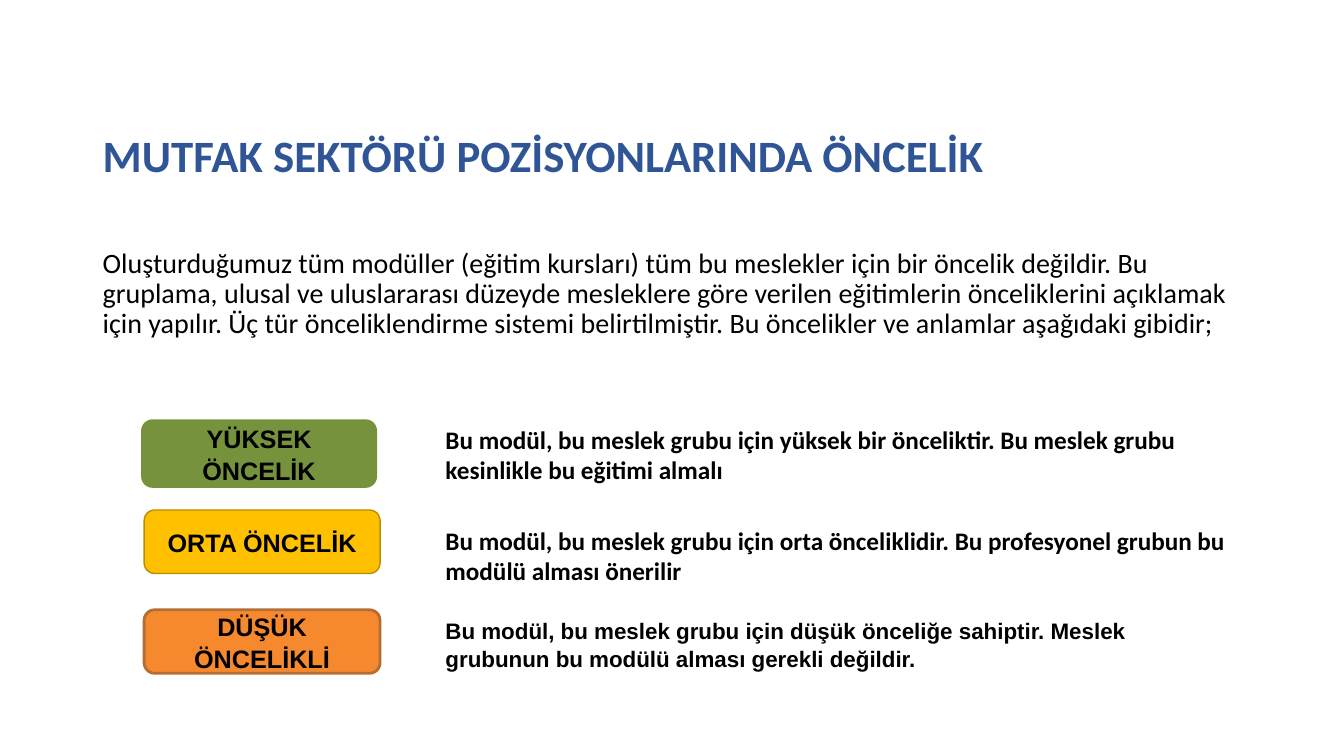
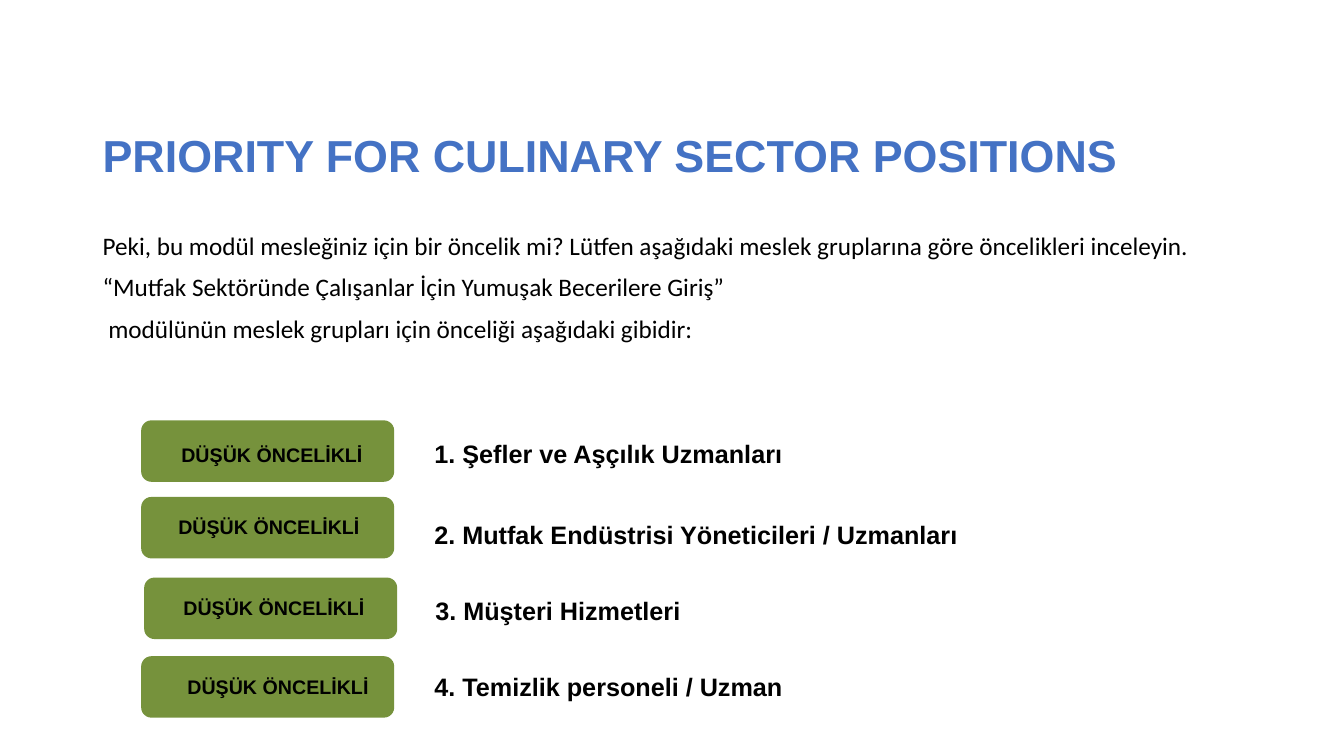
"""Build two slides on training priorities for culinary sector positions."""
from dataclasses import dataclass

import pptx
import pptx.dml.color
import pptx.enum.shapes
import pptx.enum.text
import pptx.util

Inches = pptx.util.Inches
Pt = pptx.util.Pt
Align = pptx.enum.text.PP_ALIGN
Anchor = pptx.enum.text.MSO_ANCHOR

COLORS = {
    "text": "000000",
    "title_dark": "2F5597",
    "title_light": "4472C4",
    "high": "76923C",
    "medium": "FFC000",
    "medium_edge": "BA8C00",
    "low": "F6882E",
    "low_edge": "B46D33",
}
MARGIN = 0.92
CONTENT_WIDTH = 11.5


@dataclass(frozen=True)
class Box:
    left: float
    top: float
    width: float
    height: float


@dataclass(frozen=True)
class Badge:
    box: Box
    fill: str
    edge: str = ""
    edge_width: float = 0
    label: str = ""


@dataclass(frozen=True)
class Meaning:
    box: Box
    text: str
    font: str = "Calibri"
    size: int = 18
    spacing: float = 1.0


@dataclass(frozen=True)
class Occupation:
    badge: Box
    label: Box
    name: Box
    text: str


PRIORITIES = [
    Badge(Box(1.4, 4.16, 2.34, 0.68), "high", label="YÜKSEK ÖNCELİK"),
    Badge(Box(1.43, 5.06, 2.34, 0.63), "medium", "medium_edge", 1, "ORTA ÖNCELİK"),
    Badge(Box(1.43, 6.05, 2.34, 0.63), "low", "low_edge", 2, "DÜŞÜK ÖNCELİKLİ"),
]
MEANINGS = [
    Meaning(Box(4.32, 4.16, 7.61, 0.71),
            "Bu modül, bu meslek grubu için yüksek bir önceliktir. "
            "Bu meslek grubu kesinlikle bu eğitimi almalı"),
    Meaning(Box(4.32, 5.16, 8.33, 0.71),
            "Bu modül, bu meslek grubu için orta önceliklidir. "
            "Bu profesyonel grubun bu modülü alması önerilir"),
    Meaning(Box(4.32, 6.05, 7.94, 0.68),
            "Bu modül, bu meslek grubu için düşük önceliğe sahiptir. "
            "Meslek grubunun bu modülü alması gerekli değildir.",
            "Arial", 16, 1.07),
]
OCCUPATIONS = [
    Occupation(Box(1.4, 4.17, 2.51, 0.61), Box(1.7, 4.34, 2.01, 0.34),
               Box(4.21, 4.3, 3.69, 0.4), "1. Şefler ve Aşçılık Uzmanları"),
    Occupation(Box(1.4, 4.93, 2.51, 0.61), Box(1.67, 5.06, 2.01, 0.34),
               Box(4.21, 5.1, 5.45, 0.4), "2. Mutfak Endüstrisi Yöneticileri / Uzmanları"),
    Occupation(Box(1.43, 5.73, 2.51, 0.61), Box(1.72, 5.86, 2.01, 0.34),
               Box(4.22, 5.86, 2.66, 0.4), "3. Müşteri Hizmetleri"),
    Occupation(Box(1.4, 6.51, 2.51, 0.61), Box(1.76, 6.65, 2.01, 0.34),
               Box(4.21, 6.61, 3.71, 0.4), "4. Temizlik personeli / Uzman"),
]


def rgb(name: str) -> pptx.dml.color.RGBColor:
    return pptx.dml.color.RGBColor.from_string(COLORS[name])


def inches(box: Box) -> tuple:
    return tuple(Inches(v) for v in (box.left, box.top, box.width, box.height))


def write(frame, *paragraphs: str, font: str = "Arial", size: float = 18,
          color: str = "text", bold: bool = True, align=Align.LEFT,
          anchor=Anchor.TOP, spacing: float = 1.0, gap: float = 0,
          wrap: bool = True) -> None:
    frame.word_wrap = wrap
    frame.vertical_anchor = anchor
    for index, text in enumerate(paragraphs):
        paragraph = frame.paragraphs[0] if index == 0 else frame.add_paragraph()
        paragraph.alignment = align
        paragraph.line_spacing = spacing
        if index:
            paragraph.space_before = Pt(gap)
        run = paragraph.add_run()
        run.text = text
        run.font.name = font
        run.font.size = Pt(size)
        run.font.bold = bold
        run.font.color.rgb = rgb(color)


def add_text(slide, box: Box, *paragraphs: str, **style) -> None:
    write(slide.shapes.add_textbox(*inches(box)).text_frame, *paragraphs, **style)


def add_title(slide, text: str, font: str, color: str) -> None:
    add_text(slide, Box(MARGIN, 0.79, CONTENT_WIDTH, 1.56), text, font=font,
             size=32, color=color, anchor=Anchor.MIDDLE, spacing=0.9)


def add_badge(slide, badge: Badge) -> None:
    plate = slide.shapes.add_shape(
        pptx.enum.shapes.MSO_SHAPE.ROUNDED_RECTANGLE, *inches(badge.box))
    plate.shadow.inherit = False
    plate.fill.solid()
    plate.fill.fore_color.rgb = rgb(badge.fill)
    if badge.edge:
        plate.line.color.rgb = rgb(badge.edge)
        plate.line.width = Pt(badge.edge_width)
    else:
        plate.line.fill.background()
    if badge.label:
        write(plate.text_frame, badge.label, align=Align.CENTER,
              anchor=Anchor.MIDDLE, spacing=1.07)


def build_priority_slide(slide) -> None:
    add_title(slide, "MUTFAK SEKTÖRÜ POZİSYONLARINDA ÖNCELİK", "Calibri", "title_dark")
    add_text(slide, Box(MARGIN, 2.42, CONTENT_WIDTH, 1.3),
             "Oluşturduğumuz tüm modüller (eğitim kursları) tüm bu meslekler için bir "
             "öncelik değildir. Bu gruplama, ulusal ve uluslararası düzeyde mesleklere "
             "göre verilen eğitimlerin önceliklerini açıklamak için yapılır. Üç tür "
             "önceliklendirme sistemi belirtilmiştir. Bu öncelikler ve anlamlar "
             "aşağıdaki gibidir;",
             font="Calibri", size=20, bold=False, spacing=0.9)
    for badge in PRIORITIES:
        add_badge(slide, badge)
    for meaning in MEANINGS:
        add_text(slide, meaning.box, meaning.text, font=meaning.font,
                 size=meaning.size, spacing=meaning.spacing)


def build_occupation_slide(slide) -> None:
    add_title(slide, "PRIORITY FOR CULINARY SECTOR POSITIONS", "Arial", "title_light")
    add_text(slide, Box(MARGIN, 2.27, CONTENT_WIDTH, 1.69),
             "Peki, bu modül mesleğiniz için bir öncelik mi? Lütfen aşağıdaki meslek "
             "gruplarına göre öncelikleri inceleyin.",
             "“Mutfak Sektöründe Çalışanlar İçin Yumuşak Becerilere Giriş”",
             " modülünün meslek grupları için önceliği aşağıdaki gibidir:",
             font="Calibri", bold=False, spacing=0.9, gap=10)
    for occupation in OCCUPATIONS:
        add_badge(slide, Badge(occupation.badge, "high"))
        add_text(slide, occupation.label, "DÜŞÜK ÖNCELİKLİ", size=14, wrap=False)
        add_text(slide, occupation.name, occupation.text, wrap=False)


def main() -> None:
    deck = pptx.Presentation()
    deck.slide_width = Inches(13.33)
    deck.slide_height = Inches(7.5)
    for build in (build_priority_slide, build_occupation_slide):
        build(deck.slides.add_slide(deck.slide_layouts[6]))
    deck.save("out.pptx")


if __name__ == "__main__":
    main()
